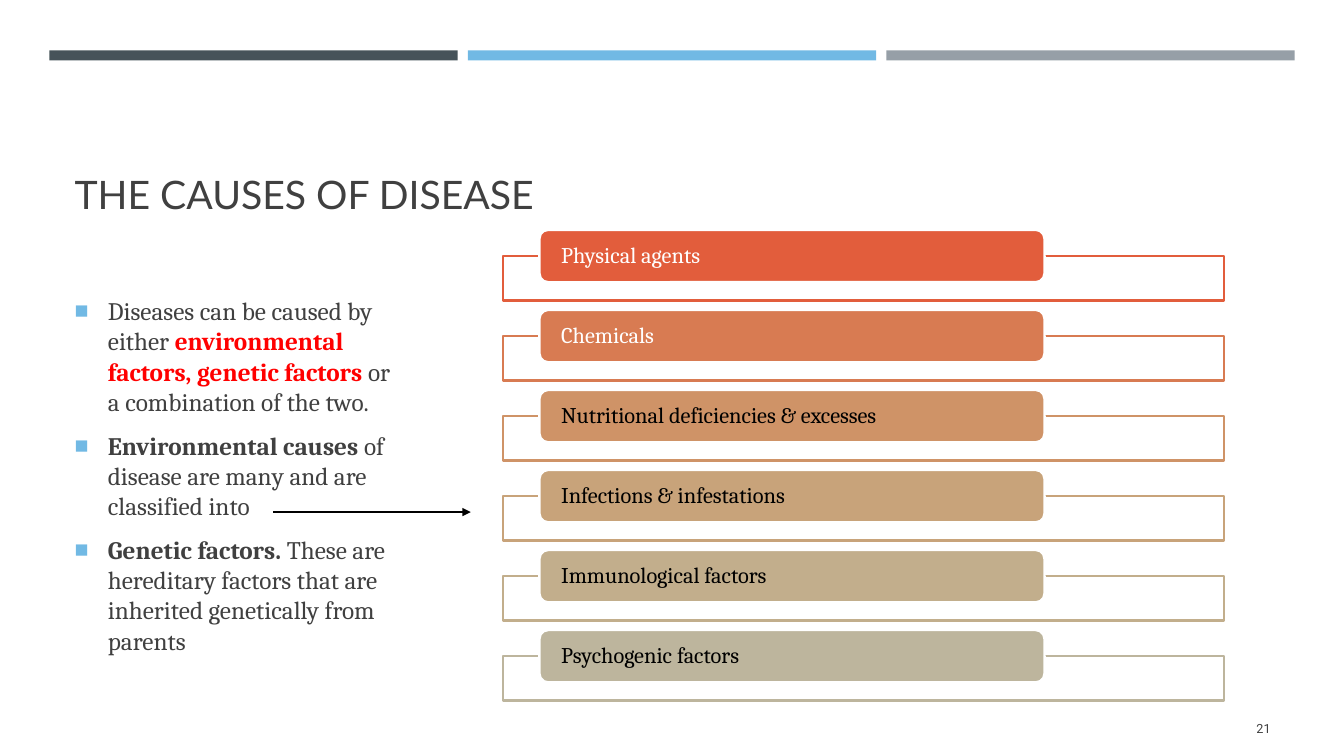
from lxml import etree
from pptx import Presentation
from pptx.dml.color import RGBColor
from pptx.enum import shapes, text
from pptx.oxml import ns
from pptx.util import Inches, Pt

WHITE = RGBColor(255, 255, 255)
BLACK = RGBColor(0, 0, 0)
RED = RGBColor(255, 0, 0)
GRAY = RGBColor(0x40, 0x40, 0x40)
SLATE = RGBColor(0x46, 0x53, 0x59)
BLUE = RGBColor(0x71, 0xB9, 0xE4)
SILVER = RGBColor(0x96, 0x9F, 0xA7)
CORAL = RGBColor(0xE2, 0x5D, 0x3C)
RUST = RGBColor(0xD8, 0x7B, 0x52)
COPPER = RGBColor(0xCF, 0x93, 0x67)
TAN = RGBColor(0xC8, 0xA3, 0x7A)
SAND = RGBColor(0xC2, 0xAE, 0x8C)
STONE = RGBColor(0xBD, 0xB5, 0x9D)


def add_run(para, words, size, face, color, bold=False):
    run = para.add_run()
    run.text = words
    run.font.size = Pt(size)
    run.font.name = face
    run.font.color.rgb = color
    run.font.bold = bold


def add_box(kind, left, top, width, height, fill, line=None):
    box = slide.shapes.add_shape(
        kind, Inches(left), Inches(top), Inches(width), Inches(height))
    box.shadow.inherit = False
    box.fill.solid()
    box.fill.fore_color.rgb = fill
    if line is None:
        box.line.fill.background()
    else:
        box.line.color.rgb = line
        box.line.width = Pt(1.75)
    return box


deck = Presentation()
deck.slide_width = Inches(13.33)
deck.slide_height = Inches(7.5)
slide = deck.slides.add_slide(deck.slide_layouts[1])
rect = shapes.MSO_SHAPE.RECTANGLE
round_rect = shapes.MSO_SHAPE.ROUNDED_RECTANGLE

for col, color in enumerate([SLATE, BLUE, SILVER]):
    add_box(rect, 0.49 + col * 4.15, 0.5, 4.05, 0.1, color)

title = slide.shapes.title
title.left, title.top = Inches(0.64), Inches(0.8)
title.width, title.height = Inches(12.32), Inches(1.41)
frame = title.text_frame
frame.auto_size = text.MSO_AUTO_SIZE.NONE
frame.vertical_anchor = text.MSO_ANCHOR.BOTTOM
para = frame.paragraphs[0]
para.alignment = text.PP_ALIGN.LEFT
add_run(para, "THE CAUSES OF DISEASE", 28, "Lato", GRAY)

body = slide.placeholders[1]
body.left, body.top = Inches(0.64), Inches(2.73)
body.width, body.height = Inches(3.44), Inches(3.97)
frame = body.text_frame
frame.auto_size = text.MSO_AUTO_SIZE.NONE
frame.vertical_anchor = text.MSO_ANCHOR.MIDDLE
points = [
    [("Diseases can be caused by either ", GRAY, False),
     ("environmental factors, genetic factors ", RED, True),
     ("or a combination of the two.", GRAY, False)],
    [("Environmental causes ", GRAY, True),
     ("of disease are many and are classified into", GRAY, False)],
    [("Genetic factors. ", GRAY, True),
     ("These are hereditary factors that are inherited genetically from parents",
      GRAY, False)],
]
for row, point in enumerate(points):
    para = frame.add_paragraph() if row else frame.paragraphs[0]
    props = para._p.get_or_add_pPr()
    props.set("marL", str(Inches(0.33)))
    props.set("indent", str(-Inches(0.33)))
    tint = etree.SubElement(props, ns.qn("a:buClr"))
    etree.SubElement(tint, ns.qn("a:srgbClr"), val=str(BLUE))
    etree.SubElement(props, ns.qn("a:buSzPct"), val="92000")
    etree.SubElement(props, ns.qn("a:buFont"), typeface="Arial")
    etree.SubElement(props, ns.qn("a:buChar"), char="■")
    para.space_before = Pt(3.6 if row else 0)
    para.space_after = Pt(6)
    for words, color, bold in point:
        add_run(para, words, 18, "Cambria", color, bold)

causes = [
    ("Physical agents", CORAL, WHITE),
    ("Chemicals", RUST, WHITE),
    ("Nutritional deficiencies & excesses", COPPER, BLACK),
    ("Infections & infestations", TAN, BLACK),
    ("Immunological factors", SAND, BLACK),
    ("Psychogenic factors", STONE, BLACK),
]
step = 3.97 / 5
for row, (words, color, ink) in enumerate(causes):
    add_box(rect, 4.99, 2.54 + row * step, 7.15, 0.44, WHITE, color)
    label = add_box(round_rect, 5.35, 2.28 + row * step, 5.01, 0.52, color, WHITE)
    frame = label.text_frame
    frame.margin_left = frame.margin_right = Inches(0.19)
    frame.margin_top = frame.margin_bottom = 0
    frame.vertical_anchor = text.MSO_ANCHOR.MIDDLE
    para = frame.paragraphs[0]
    para.alignment = text.PP_ALIGN.LEFT
    para.line_spacing = 0.9
    add_run(para, words, 16, "Cambria", ink)

number = slide.shapes.add_textbox(
    Inches(11.55), Inches(7.03), Inches(1.15), Inches(0.4))
frame = number.text_frame
frame.word_wrap = True
frame.vertical_anchor = text.MSO_ANCHOR.MIDDLE
para = frame.paragraphs[0]
para.alignment = text.PP_ALIGN.RIGHT
add_run(para, "21", 9, "Roboto", GRAY)

arrow = slide.shapes.add_connector(
    shapes.MSO_CONNECTOR.STRAIGHT,
    Inches(2.71), Inches(5.08), Inches(4.67), Inches(5.08))
arrow.line.color.rgb = BLACK
arrow.line.width = Pt(1.75)
etree.SubElement(arrow.line._get_or_add_ln(), ns.qn("a:tailEnd"), type="triangle")
etree.SubElement(arrow._element.spPr, ns.qn("a:effectLst"))

deck.save("out.pptx")
